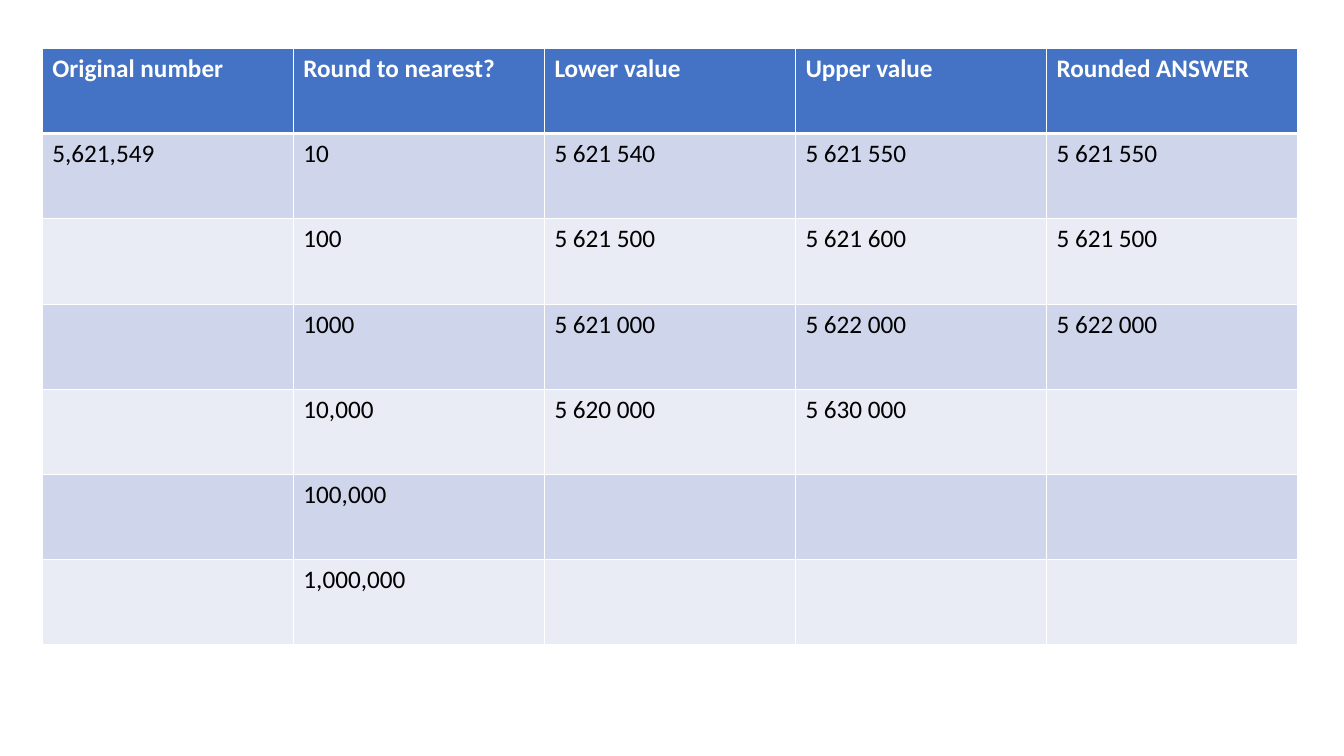
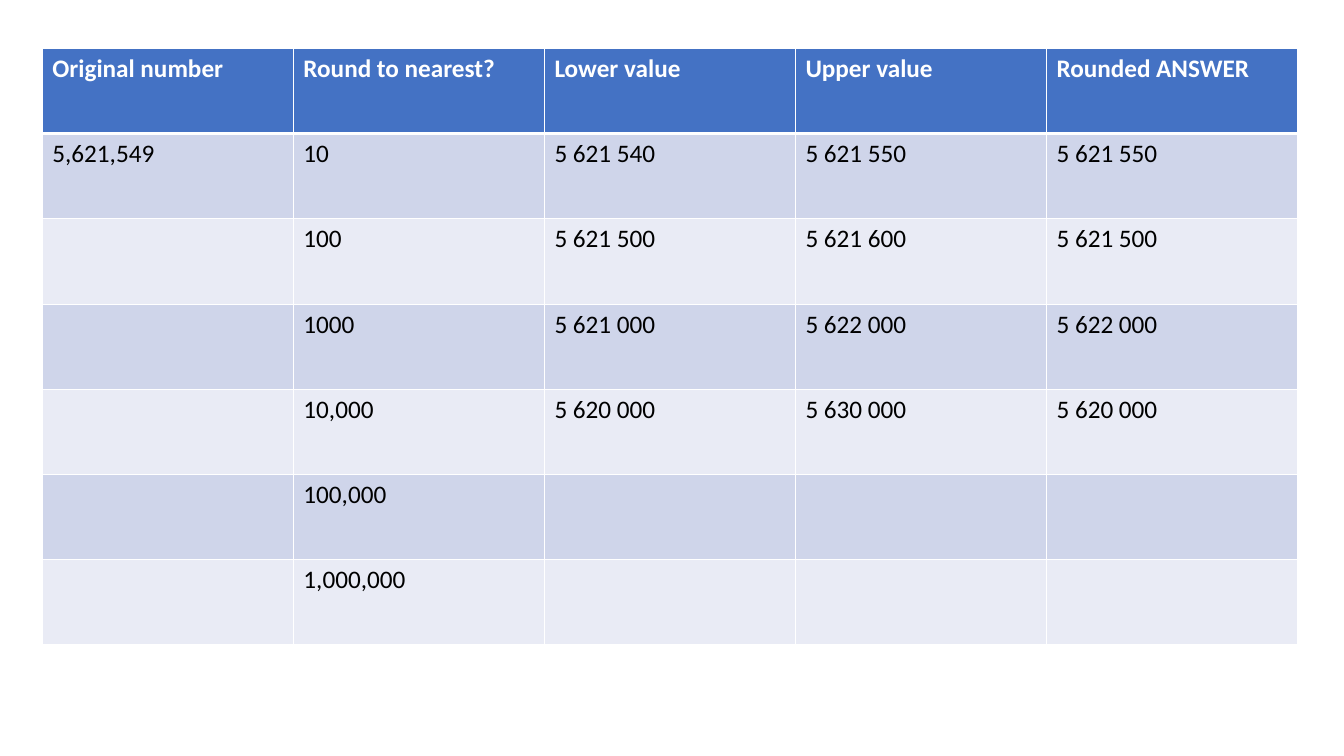
from lxml.etree import SubElement
from pptx import Presentation
from pptx.dml.color import RGBColor
from pptx.oxml.ns import qn
from pptx.util import Inches, Pt

HEADINGS = ["Original number", "Round to nearest?", "Lower value", "Upper value", "Rounded ANSWER"]
ROUNDINGS = [
    ["5,621,549", "10", "5 621 540", "5 621 550", "5 621 550"],
    ["", "100", "5 621 500", "5 621 600", "5 621 500"],
    ["", "1000", "5 621 000", "5 622 000", "5 622 000"],
    ["", "10,000", "5 620 000", "5 630 000", "5 620 000"],
    ["", "100,000", "", "", ""],
    ["", "1,000,000", "", "", ""],
]
ANSWERS_SHOWN = [3, 4]

FONT, TEXT_SIZE = "Calibri", 18
WHITE, BLACK, HEADER_BLUE = "FFFFFF", "000000", "4472C4"
BANDS = ["CFD5EA", "E9EBF5"]
LEFT, TOP, WIDTH, HEIGHT = Inches(0.42), Inches(0.48), Inches(12.45), Inches(5.92)
THIN, THICK = 1, 3


def rgb(color):
    return RGBColor.from_string(color)


def write(cell, text, color=BLACK, bold=False):
    paragraph = cell.text_frame.paragraphs[0]
    paragraph.font.size = Pt(TEXT_SIZE)
    if text:
        run = paragraph.add_run()
        run.text = text
        run.font.name = FONT
        run.font.size = Pt(TEXT_SIZE)
        run.font.bold = bold
        run.font.color.rgb = rgb(color)


def draw_borders(cell, top=THIN, bottom=THIN):
    properties = cell._tc.get_or_add_tcPr()
    for side, width in (("L", THIN), ("R", THIN), ("T", top), ("B", bottom)):
        border = SubElement(properties, qn(f"a:ln{side}"), w=str(Pt(width)))
        SubElement(SubElement(border, qn("a:solidFill")), qn("a:srgbClr"), val=WHITE)


def fill_cell(cell, color):
    cell.fill.solid()
    cell.fill.fore_color.rgb = rgb(color)


def add_rounding_table(slide, answers_shown):
    rows = [HEADINGS] + [
        row if index < answers_shown else row[:-1] + [""]
        for index, row in enumerate(ROUNDINGS)
    ]
    table = slide.shapes.add_table(len(rows), len(HEADINGS), LEFT, TOP, WIDTH, HEIGHT).table
    for r, row in enumerate(rows):
        header = r == 0
        for c, text in enumerate(row):
            cell = table.cell(r, c)
            draw_borders(cell, top=THICK if r == 1 else THIN, bottom=THICK if header else THIN)
            fill_cell(cell, HEADER_BLUE if header else BANDS[(r - 1) % 2])
            write(cell, text, color=WHITE if header else BLACK, bold=header)


def main():
    presentation = Presentation()
    presentation.slide_width, presentation.slide_height = Inches(13.33), Inches(7.5)
    for answers_shown in ANSWERS_SHOWN:
        slide = presentation.slides.add_slide(presentation.slide_layouts[6])
        add_rounding_table(slide, answers_shown)
    presentation.save("out.pptx")


if __name__ == "__main__":
    main()
